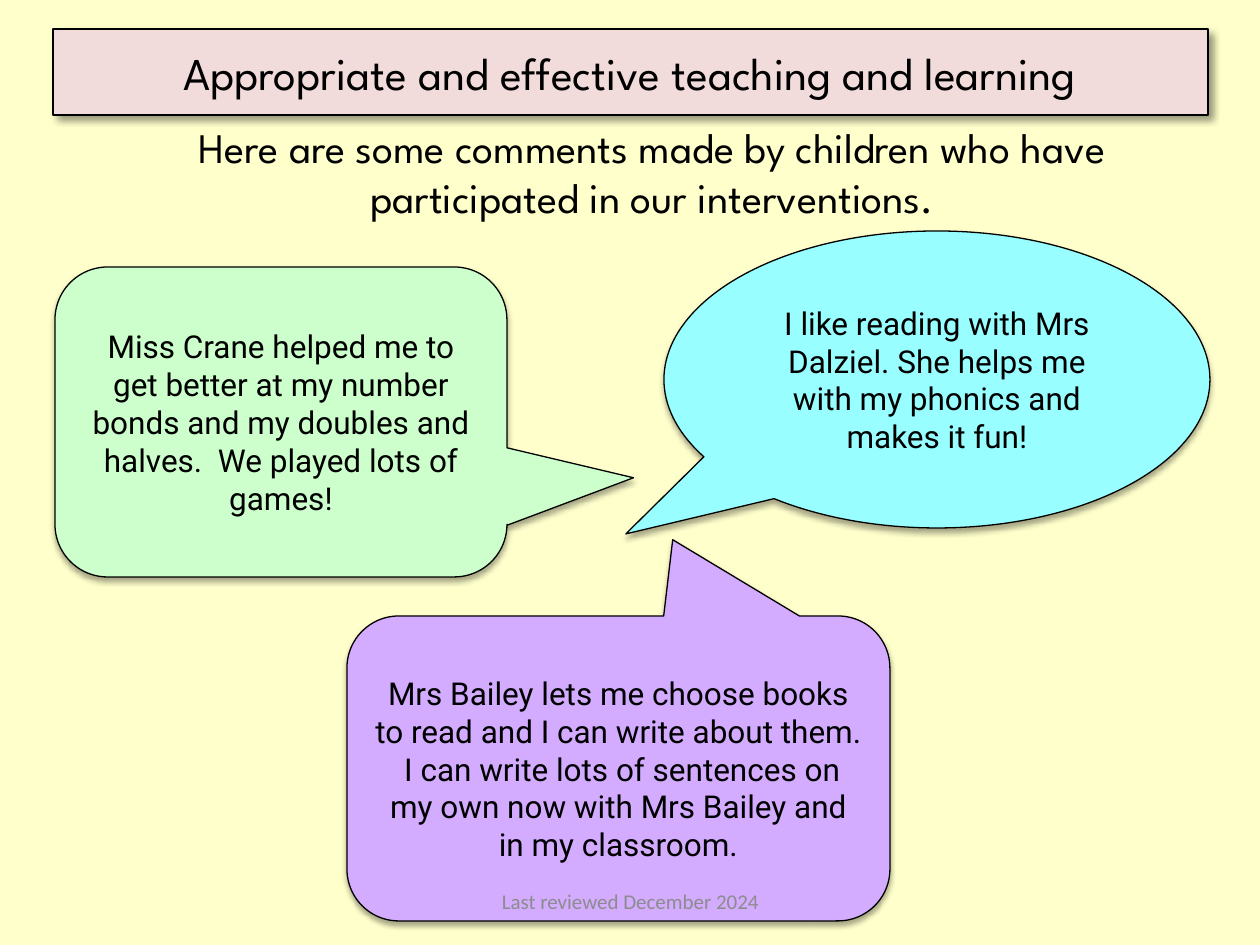
from lxml import etree
from pptx import Presentation
from pptx.dml.color import RGBColor
from pptx.enum.shapes import MSO_SHAPE
from pptx.enum.text import MSO_ANCHOR, MSO_AUTO_SIZE, PP_ALIGN
from pptx.oxml.ns import qn
from pptx.util import Pt

PX = 914400 / 126
CENTER = PP_ALIGN.CENTER
TOP, MIDDLE = MSO_ANCHOR.TOP, MSO_ANCHOR.MIDDLE
NO_FIT = MSO_AUTO_SIZE.NONE
OVAL = MSO_SHAPE.OVAL_CALLOUT
ROUNDED = MSO_SHAPE.ROUNDED_RECTANGULAR_CALLOUT
rgb = RGBColor.from_string


def write(sp, text, font, size, color="000000", anchor=MIDDLE):
    tf = sp.text_frame
    for name, value in {"word_wrap": True, "auto_size": NO_FIT,
                        "vertical_anchor": anchor}.items():
        setattr(tf, name, value)
    p = tf.paragraphs[0]
    p.alignment = CENTER
    r = p.add_run()
    r.text = text
    for name, value in {"name": font, "size": Pt(size)}.items():
        setattr(r.font, name, value)
    r.font.color.rgb = rgb(color)


def paint(sp, fill, alpha, blur, dist, angle):
    sp.fill.solid()
    sp.fill.fore_color.rgb = rgb(fill)
    sp.line.color.rgb = rgb("000000")
    sp.line.width = Pt(0.75)
    sp.shadow.inherit = False
    effects = sp._element.spPr.find(qn("a:effectLst"))
    shadow = etree.SubElement(effects, qn("a:outerShdw"), {
        "blurRad": str(Pt(blur)), "dist": str(Pt(dist)),
        "dir": str(angle * 60000), "rotWithShape": "0"})
    color = etree.SubElement(shadow, qn("a:srgbClr"), val="000000")
    etree.SubElement(color, qn("a:alpha"), val=str(alpha * 1000))


prs = Presentation()
prs.slide_width, prs.slide_height = round(1260 * PX), round(945 * PX)
s = prs.slides.add_slide(prs.slide_layouts[5])
s.background.fill.solid()
s.background.fill.fore_color.rgb = rgb("FFFFCC")

title = s.shapes.title
box = (53, 29, 1155, 86)
for name, value in zip(("left", "top", "width", "height"), box):
    setattr(title, name, round(value * PX))
paint(title, "F2DCDB", 40, 4, 3, 45)
write(title, "Appropriate and effective teaching and learning", "League Spartan", 26)

intro = s.shapes.add_textbox(*[round(v * PX) for v in (77, 115, 1150, 115)])
write(intro, "Here are some comments made by children who have participated in our interventions.",
      "League Spartan", 24, anchor=TOP)

comments = [
    (OVAL, (664, 231, 546, 297), (-0.57, 0.52), "98FEFF",
     "I like reading with Mrs Dalziel. She helps me with my phonics and makes it fun!"),
    (ROUNDED, (55, 267, 452, 310), (0.78, 0.18, 0.17), "CCFFCC",
     "Miss Crane helped me to get better at my number bonds and my doubles and halves.  "
     "We played lots of games!"),
    (ROUNDED, (347, 616, 543, 305), (0.1, -0.75, 0.17), "D3ABFF",
     "Mrs Bailey lets me choose books to read and I can write about them.  "
     "I can write lots of sentences on my own now with Mrs Bailey and in my classroom."),
]
for kind, box, adjustments, fill, text in comments:
    sp = s.shapes.add_shape(kind, *[round(v * PX) for v in box])
    for i, value in enumerate(adjustments):
        sp.adjustments[i] = value
    paint(sp, fill, 35, 3.1, 1.8, 90)
    write(sp, text, "Roboto", 18)

footer = s.shapes.add_textbox(*[round(v * PX) for v in (431, 876, 399, 50)])
write(footer, "Last reviewed December 2024", "Calibri", 12, "8C8C8C")

prs.save("out.pptx")
